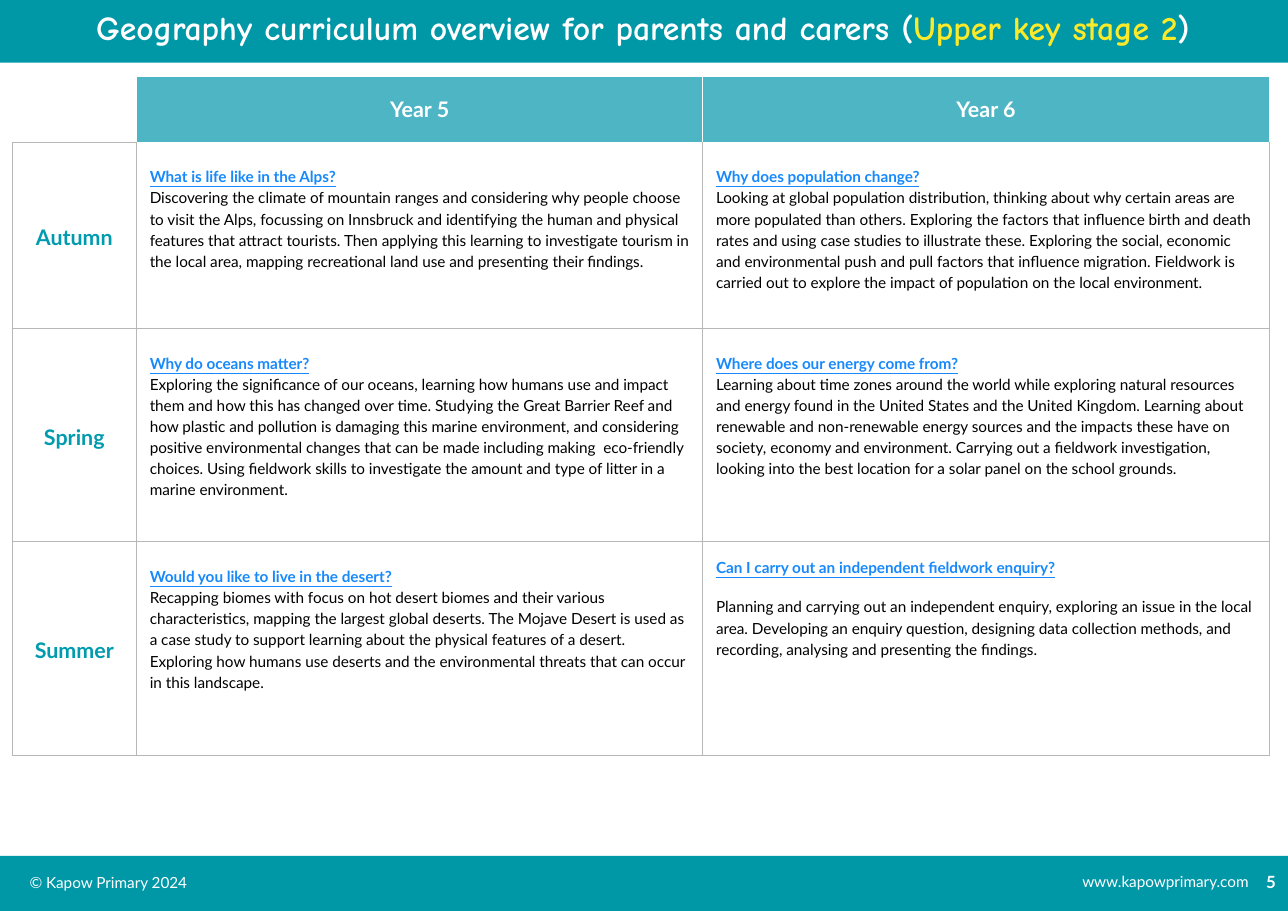
from lxml.etree import SubElement
from pptx import Presentation
from pptx.dml.color import RGBColor
from pptx.enum.shapes import MSO_SHAPE
from pptx.enum.text import MSO_ANCHOR, PP_ALIGN
from pptx.oxml.ns import qn
from pptx.util import Inches, Pt

COLORS = {
    "band": "0097A7",
    "header": "4EB5C5",
    "season": "009BAF",
    "topic": "1789FC",
    "highlight": "FAEA2A",
    "border": "B7B7B7",
    "white": "FFFFFF",
    "black": "000000",
}
YEARS = ["Year 5", "Year 6"]
COLUMN_WIDTHS = [1.13, 5.14, 5.14]
ROW_HEIGHTS = [0.53, 1.69, 1.94, 1.94]
SEASONS = {
    "Autumn": [
        ("What is life like in the Alps?",
         "Discovering the climate of mountain ranges and considering why people choose to visit the Alps, "
         "focussing on Innsbruck and identifying the human and physical features that attract tourists. "
         "Then applying this learning to investigate tourism in the local area, mapping recreational land "
         "use and presenting their findings."),
        ("Why does population change?",
         "Looking at global population distribution, thinking about why certain areas are more populated "
         "than others. Exploring the factors that influence birth and death rates and using case studies "
         "to illustrate these. Exploring the social, economic and environmental push and pull factors that "
         "influence migration. Fieldwork is carried out to explore the impact of population on the local "
         "environment."),
    ],
    "Spring": [
        ("Why do oceans matter?",
         "Exploring the significance of our oceans, learning how humans use and impact them and how this "
         "has changed over time. Studying the Great Barrier Reef and how plastic and pollution is damaging "
         "this marine environment, and considering positive environmental changes that can be made "
         "including making  eco-friendly choices. Using fieldwork skills to investigate the amount and "
         "type of litter in a marine environment."),
        ("Where does our energy come from?",
         "Learning about time zones around the world while exploring natural resources and energy found "
         "in the United States and the United Kingdom. Learning about renewable and non-renewable energy "
         "sources and the impacts these have on society, economy and environment. Carrying out a fieldwork "
         "investigation, looking into the best location for a solar panel on the school grounds."),
    ],
    "Summer": [
        ("Would you like to live in the desert?",
         "Recapping biomes with focus on hot desert biomes and their various characteristics, mapping the "
         "largest global deserts. The Mojave Desert is used as a case study to support learning about the "
         "physical features of a desert. Exploring how humans use deserts and the environmental threats "
         "that can occur in this landscape."),
        ("Can I carry out an independent fieldwork enquiry?",
         "Planning and carrying out an independent enquiry, exploring an issue in the local area. "
         "Developing an enquiry question, designing data collection methods, and recording, analysing and "
         "presenting the findings."),
    ],
}
SPACED_TOPIC = "Can I carry out an independent fieldwork enquiry?"


def rgb(name):
    return RGBColor.from_string(COLORS[name])


def set_font(font, size, color, bold=False, name="Lato"):
    font.name = name
    font.size = Pt(size)
    font.bold = bold
    font.color.rgb = rgb(color)


def add_band(slide, top, height):
    band = slide.shapes.add_shape(
        MSO_SHAPE.RECTANGLE, Inches(0), Inches(top), Inches(11.69), Inches(height))
    band.shadow.inherit = False
    band.fill.solid()
    band.fill.fore_color.rgb = rgb("band")
    band.line.fill.background()


def add_text(slide, position, inset, align, text=""):
    """Add a one-paragraph text box and return its paragraph."""
    frame = slide.shapes.add_textbox(*map(Inches, position)).text_frame
    frame.word_wrap = True
    frame.margin_left = frame.margin_right = Inches(inset)
    frame.margin_top = frame.margin_bottom = Inches(inset)
    paragraph = frame.paragraphs[0]
    paragraph.text = text
    paragraph.alignment = align
    return paragraph


def add_title(slide):
    paragraph = add_text(slide, (-0.01, -0.03, 11.69, 0.59), 0.13, PP_ALIGN.CENTER)
    paragraph.line_spacing = 0.9
    for text, color in [
        ("Geography curriculum overview for parents and carers (", "white"),
        ("Upper key stage 2", "highlight"),
        (")", "white"),
    ]:
        run = paragraph.add_run()
        run.text = text
        set_font(run.font, 22, color, bold=True, name="Comic Neue")


def format_cell(cell, fill, borders):
    """Set margins, fill and borders; borders maps a side (L, R, T, B) to a colour."""
    cell.margin_left = cell.margin_right = Inches(0.12)
    cell.margin_top = cell.margin_bottom = Inches(0.15)
    properties = cell._tc.get_or_add_tcPr()
    for side in "LRTB":
        line = SubElement(properties, qn(f"a:ln{side}"), w=str(Pt(0.75)))
        if side in borders:
            solid = SubElement(line, qn("a:solidFill"))
            SubElement(solid, qn("a:srgbClr"), val=COLORS[borders[side]])
        else:
            SubElement(line, qn("a:noFill"))
    cell.fill.solid()
    cell.fill.fore_color.rgb = rgb(fill)


def fill_label(cell, text, color):
    cell.vertical_anchor = MSO_ANCHOR.MIDDLE
    paragraph = cell.text_frame.paragraphs[0]
    paragraph.text = text
    paragraph.alignment = PP_ALIGN.CENTER
    set_font(paragraph.font, 14, color, bold=True)


def fill_unit(cell, topic, summary):
    heading = cell.text_frame.paragraphs[0]
    heading.text = topic
    set_font(heading.font, 10, "topic", bold=True)
    heading.font.underline = True
    if topic == SPACED_TOPIC:
        heading.space_after = Pt(12)
    else:
        heading.line_spacing = 1.5
    body = cell.text_frame.add_paragraph()
    body.text = summary
    body.line_spacing = 1.15
    set_font(body.font, 10, "black")


def add_curriculum_table(slide):
    table = slide.shapes.add_table(
        len(ROW_HEIGHTS), len(COLUMN_WIDTHS), Inches(0.11), Inches(0.69),
        Inches(sum(COLUMN_WIDTHS)), Inches(sum(ROW_HEIGHTS))).table
    table.first_row = table.horz_banding = False
    for column, width in zip(table.columns, COLUMN_WIDTHS):
        column.width = Inches(width)
    for row, height in zip(table.rows, ROW_HEIGHTS):
        row.height = Inches(height)

    format_cell(table.cell(0, 0), "white", {"R": "white", "B": "border"})
    for column, year in enumerate(YEARS, 1):
        cell = table.cell(0, column)
        format_cell(cell, "header", dict.fromkeys("LRTB", "white"))
        fill_label(cell, year, "white")

    grey = dict.fromkeys("LRTB", "border")
    for row, (season, units) in enumerate(SEASONS.items(), 1):
        label = table.cell(row, 0)
        format_cell(label, "white", grey)
        fill_label(label, season, "season")
        label.text_frame.paragraphs[0].line_spacing = 1.15
        for column, (topic, summary) in enumerate(units, 1):
            cell = table.cell(row, column)
            format_cell(cell, "white", grey | {"T": "white"} if row == 1 else grey)
            fill_unit(cell, topic, summary)


def main():
    presentation = Presentation()
    presentation.slide_width = Inches(11.69)
    presentation.slide_height = Inches(8.27)
    slide = presentation.slides.add_slide(presentation.slide_layouts[6])

    add_band(slide, 7.77, 0.5)
    add_band(slide, 0, 0.57)
    add_title(slide)
    add_curriculum_table(slide)
    owner = add_text(slide, (0.17, 7.84, 1.97, 0.37), 0.1, PP_ALIGN.LEFT, "© Kapow Primary 2024")
    set_font(owner.font, 10, "white")
    website = add_text(slide, (9.46, 7.83, 1.97, 0.37), 0.1, PP_ALIGN.RIGHT, "www.kapowprimary.com")
    set_font(website.font, 10, "white")
    page = add_text(slide, (10.99, 7.82, 0.7, 0.63), 0.11, PP_ALIGN.RIGHT, "5")
    set_font(page.font, 11, "white", bold=True)
    presentation.save("out.pptx")


if __name__ == "__main__":
    main()
